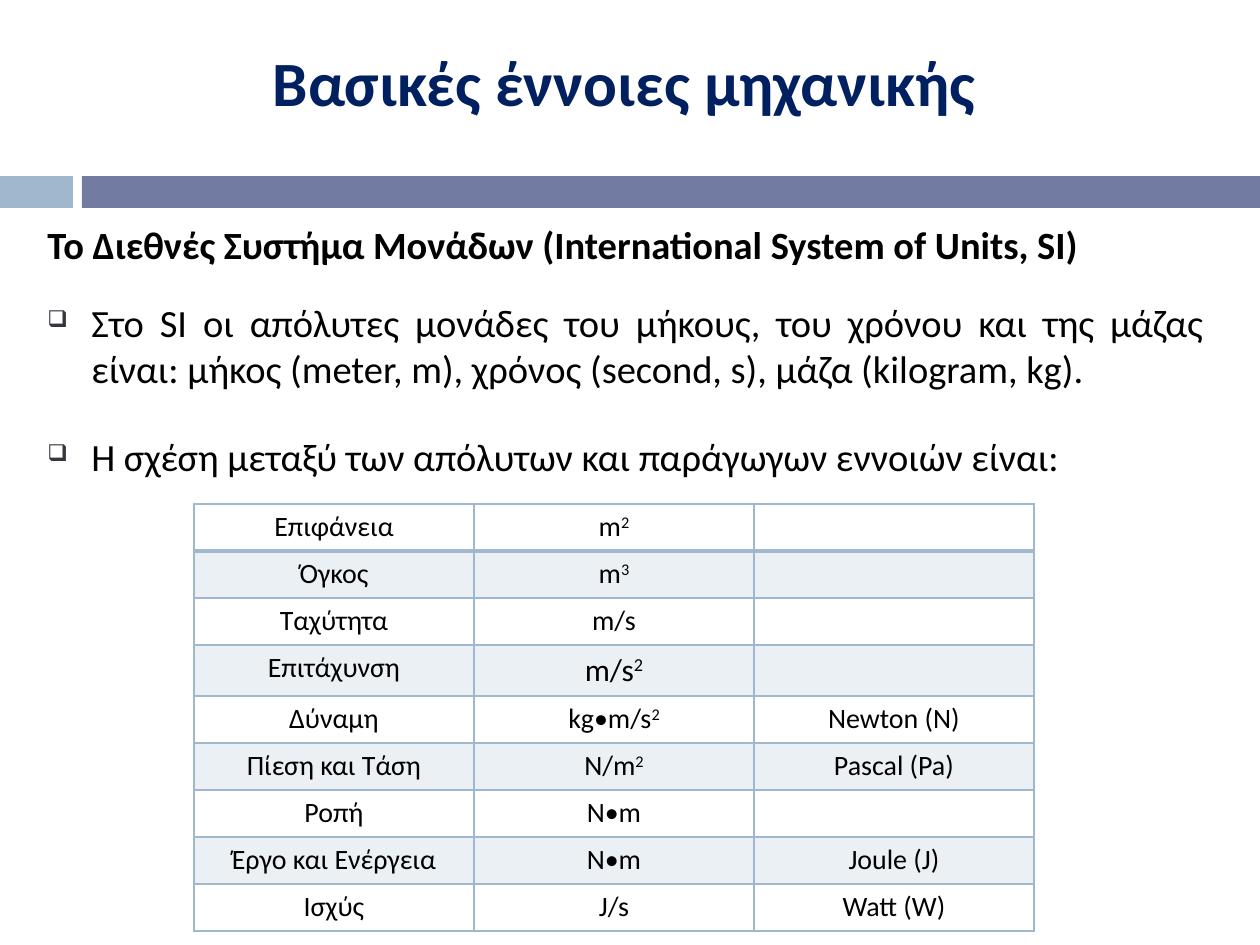
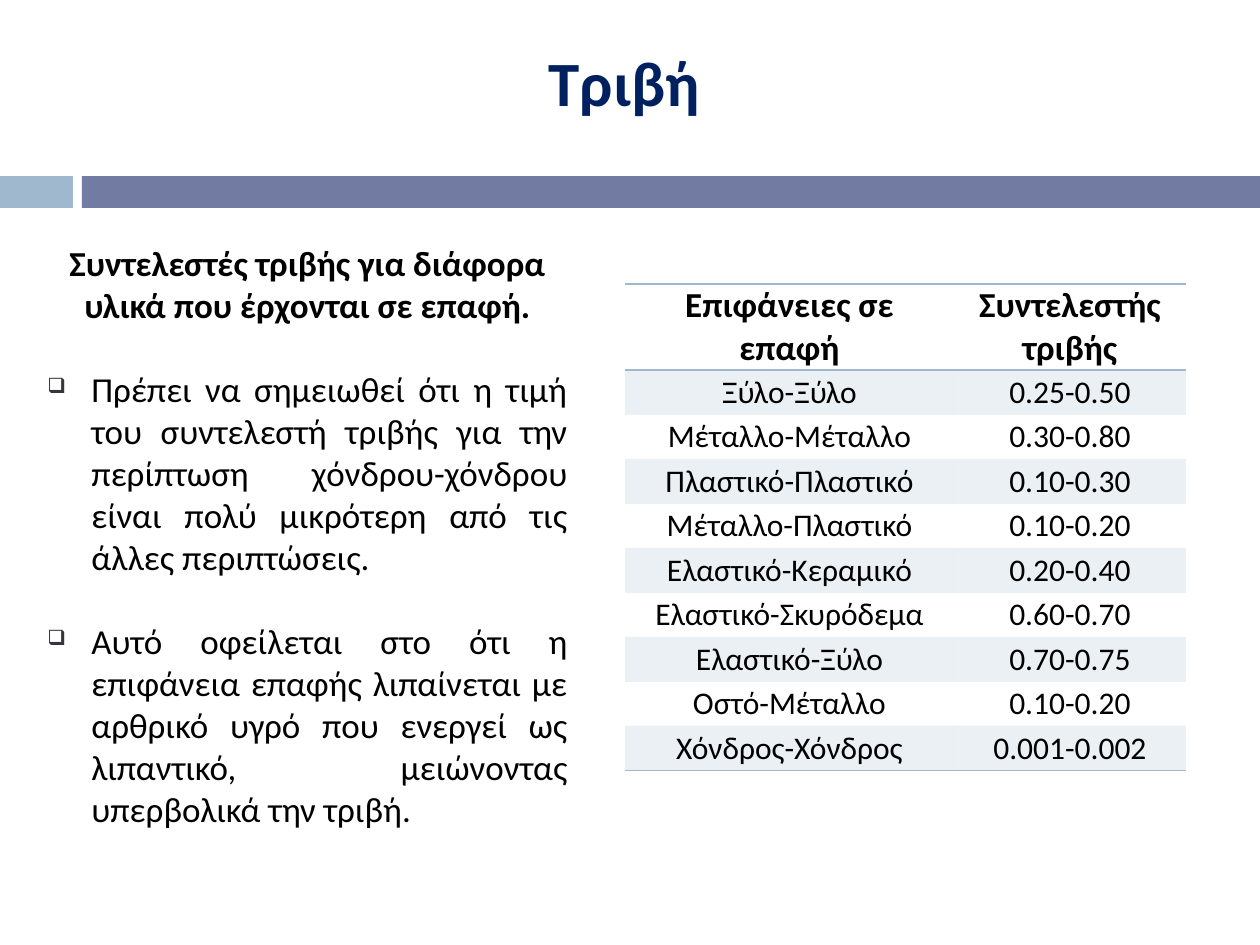
from lxml import etree
from pptx import Presentation
from pptx import util as u
from pptx.dml.color import RGBColor
from pptx.enum import shapes, text
from pptx.oxml import ns

SKY, SLATE, NAVY, INK, MARK = "9FB8CD", "727CA3", "002060", "000000", "35353E"
FONT = "Calibri"
PLAIN = "{2D5ABB26-0587-4C30-8999-92F81FD0307C}"
ALIGN = text.PP_ALIGN

UNITS = [
    ("Επιφάνεια", "m^2", ""),
    ("Όγκος", "m^3", ""),
    ("Ταχύτητα", "m/s", ""),
    ("Επιτάχυνση", "m/s^2", ""),
    ("Δύναμη", "kg•m/s^2", "Newton (N)"),
    ("Πίεση και Τάση", "N/m^2", "Pascal (Pa)"),
    ("Ροπή", "N•m", ""),
    ("Έργο και Ενέργεια", "N•m", "Joule (J)"),
    ("Ισχύς", "J/s", "Watt (W)"),
]
PAIRS = [
    ("Επιφάνειες σε επαφή", "Συντελεστής τριβής"),
    ("Ξύλο-Ξύλο", "0.25-0.50"),
    ("Μέταλλο-Μέταλλο", "0.30-0.80"),
    ("Πλαστικό-Πλαστικό", "0.10-0.30"),
    ("Μέταλλο-Πλαστικό", "0.10-0.20"),
    ("Ελαστικό-Κεραμικό", "0.20-0.40"),
    ("Ελαστικό-Σκυρόδεμα", "0.60-0.70"),
    ("Ελαστικό-Ξύλο", "0.70-0.75"),
    ("Οστό-Μέταλλο", "0.10-0.20"),
    ("Χόνδρος-Χόνδρος", "0.001-0.002"),
]


def px(n):
    return u.Emu(round(n * 914400 / 126))


def paint(color, tone):
    color.rgb = RGBColor.from_string(tone)


def sub(parent, tag, **attrs):
    return etree.SubElement(parent, ns.qn("a:" + tag), attrs)


def write(para, words, size=16, tone=INK, bold=False, align=ALIGN.CENTER, after=0):
    para.alignment = align
    para.space_before = u.Pt(0)
    para.space_after = u.Pt(after)
    for i, part in enumerate(words.split("^")):
        run = para.add_run()
        run.text = part
        font = run.font
        font.name, font.size, font.bold = FONT, u.Pt(size), bold
        paint(font.color, tone)
        if i:
            run._r.get_or_add_rPr().set("baseline", "30000")


def bullet(para):
    props = para._p.get_or_add_pPr()
    props.set("marL", str(px(44)))
    props.set("indent", str(px(-44)))
    sub(sub(props, "buClr"), "srgbClr", val=MARK)
    sub(props, "buSzPct", val="60000")
    sub(props, "buChar", char="❑")


def band(slide, x, y, w, h, tone):
    bar = slide.shapes.add_shape(shapes.MSO_SHAPE.RECTANGLE, px(x), px(y), px(w), px(h))
    bar.shadow.inherit = False
    bar.fill.solid()
    paint(bar.fill.fore_color, tone)
    bar.line.fill.background()


def frame(deck, title):
    slide = deck.slides.add_slide(deck.slide_layouts[5])
    band(slide, 0, 176, 73, 32, SKY)
    band(slide, 82, 176, 1178, 32, SLATE)
    head = slide.shapes.title
    head.left, head.top, head.width, head.height = px(89), px(37), px(1071), px(147)
    area = head.text_frame
    area.auto_size = text.MSO_AUTO_SIZE.NONE
    area.vertical_anchor = text.MSO_ANCHOR.TOP
    write(area.paragraphs[0], title, size=36, tone=NAVY, bold=True)
    return slide


def body(slide, x, y, w, h, lead, points, size, align, after):
    area = slide.shapes.add_textbox(px(x), px(y), px(w), px(h)).text_frame
    area.word_wrap = True
    write(area.paragraphs[0], lead, size=size, bold=True, align=align, after=after)
    for point in points:
        para = area.add_paragraph()
        write(para, point, size=size, align=ALIGN.JUSTIFY, after=24)
        bullet(para)


def edges(cell, **widths):
    props = cell._tc.get_or_add_tcPr()
    for side in "LRTB":
        width = widths.get(side, 0)
        line = sub(props, "ln" + side, w=str(u.Pt(width)))
        if width:
            sub(sub(line, "solidFill"), "srgbClr", val=SKY)
        else:
            sub(line, "noFill")


def shade(cell, on):
    if not on:
        cell.fill.background()
        return
    cell.fill.solid()
    paint(cell.fill.fore_color, SKY)
    tint = cell._tc.tcPr.find(".//" + ns.qn("a:solidFill") + "[last()]/" + ns.qn("a:srgbClr"))
    for item in cell._tc.tcPr.findall(ns.qn("a:solidFill")):
        tint = item[0]
    sub(tint, "alpha", val="20000")


def grid(slide, x, y, cols, rows, data, style):
    item = slide.shapes.add_table(len(rows), len(cols), px(x), px(y), px(sum(cols)), px(sum(rows)))
    table = item.table
    table.first_row = table.horz_banding = False
    table._tbl.tblPr.find(ns.qn("a:tableStyleId")).text = PLAIN
    for col, width in zip(table.columns, cols):
        col.width = px(width)
    for r, (high, line) in enumerate(zip(rows, data)):
        table.rows[r].height = px(high)
        for c, words in enumerate(line):
            cell = table.cell(r, c)
            style(cell, r, c, words)
            shade(cell, r % 2)


def unit(cell, r, c, words):
    if words:
        big = words == "m/s^2"
        write(cell.text_frame.paragraphs[0], words, size=18 if big else 16)
    else:
        cell.margin_top = cell.margin_bottom = 0
    edges(cell, L=1, R=1, T=2 if r == 1 else 1, B=1 if r else 2)


def pair(cell, r, c, words):
    cell.vertical_anchor = text.MSO_ANCHOR.MIDDLE
    cell.margin_left = cell.margin_right = px(9)
    cell.margin_top = cell.margin_bottom = 0
    head = r == 0
    write(cell.text_frame.paragraphs[0], words, size=20 if head else 18, bold=head)
    edges(cell, T=int(r < 2), B=int(r in (0, len(PAIRS) - 1)))


def basics(deck):
    slide = frame(deck, "Βασικές έννοιες μηχανικής")
    points = [
        "Στο SI οι απόλυτες μονάδες του μήκους, του χρόνου και της μάζας είναι: "
        "μήκος (meter, m), χρόνος (second, s), μάζα (kilogram, kg).",
        "Η σχέση μεταξύ των απόλυτων και παράγωγων εννοιών είναι:",
    ]
    lead = "Το Διεθνές Συστήμα Μονάδων (International System of Units, SI)"
    body(slide, 35, 215, 1181, 684, lead, points, 22, ALIGN.JUSTIFY, 18)
    grid(slide, 194, 504, [280] * 3, [47] * 3 + [51] + [47] * 5, UNITS, unit)


def friction(deck):
    slide = frame(deck, "Τριβή")
    points = [
        "Πρέπει να σημειωθεί ότι η τιμή του συντελεστή τριβής για την περίπτωση "
        "χόνδρου-χόνδρου είναι πολύ μικρότερη από τις άλλες περιπτώσεις.",
        "Αυτό οφείλεται στο ότι η επιφάνεια επαφής λιπαίνεται με αρθρικό υγρό που "
        "ενεργεί ως λιπαντικό, μειώνοντας υπερβολικά την τριβή.",
    ]
    lead = "Συντελεστές τριβής για διάφορα υλικά που έρχονται σε επαφή."
    body(slide, 35, 235, 545, 684, lead, points, 20, ALIGN.CENTER, 24)
    grid(slide, 625, 284, [329, 232], [86] + [45, 44] * 4 + [45], PAIRS, pair)


def main():
    deck = Presentation()
    deck.slide_width, deck.slide_height = px(1260), px(945)
    basics(deck)
    friction(deck)
    deck.save("out.pptx")


if __name__ == "__main__":
    main()
